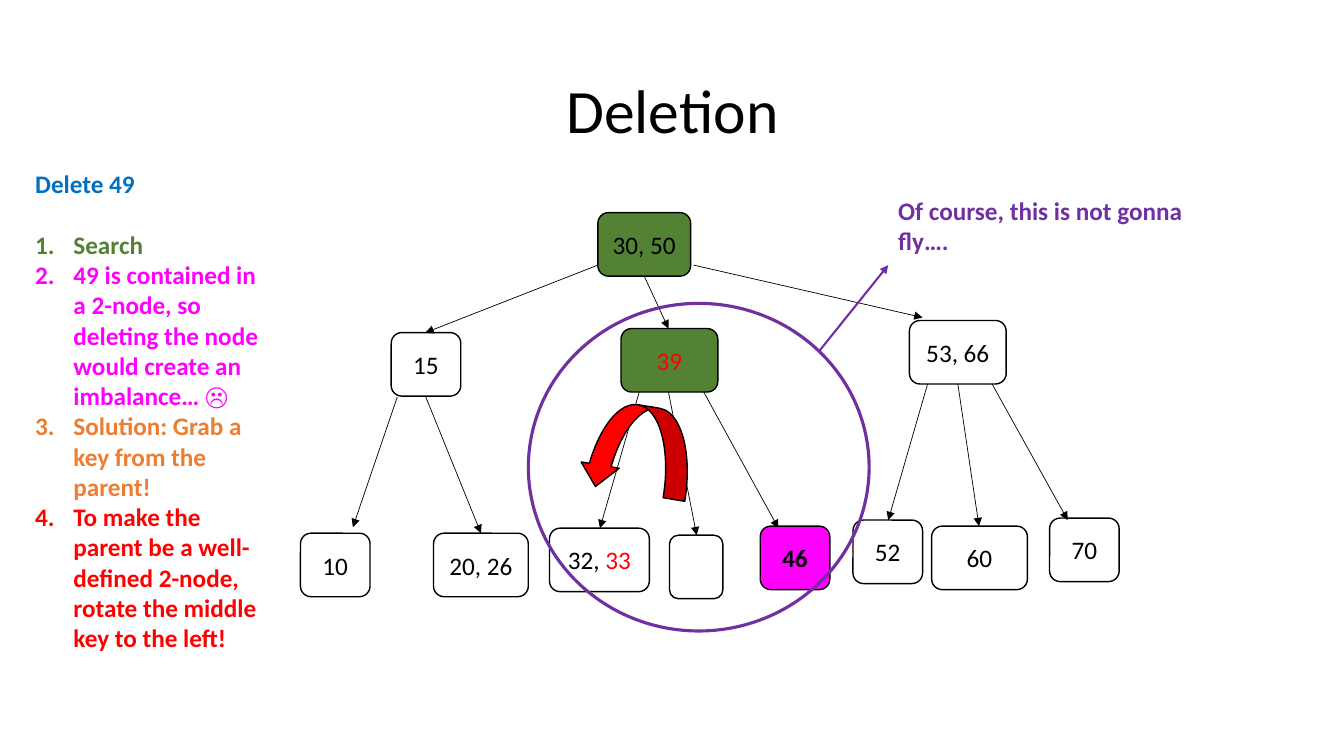
from lxml import etree
from pptx import Presentation
from pptx.dml.color import RGBColor
from pptx.enum.shapes import MSO_CONNECTOR, MSO_SHAPE
from pptx.enum.text import MSO_ANCHOR, PP_ALIGN
from pptx.oxml.ns import qn
from pptx.util import Inches, Pt

LINE = MSO_CONNECTOR.STRAIGHT
ROUND = MSO_SHAPE.ROUNDED_RECTANGLE
OVAL = MSO_SHAPE.OVAL
CURVE = MSO_SHAPE.CURVED_LEFT_ARROW
CENTER, LEFT = PP_ALIGN.CENTER, PP_ALIGN.LEFT
MIDDLE, TOP = MSO_ANCHOR.MIDDLE, MSO_ANCHOR.TOP

BLACK, BLUE, GREEN, PINK = "000000", "0070C0", "548235", "FF00FF"
ORANGE, RED, PURPLE = "ED7D31", "FF0000", "7030A0"
NODE_H = 0.63

# left, top, width, fill, bold, runs
NODES = [
    (5.93, 2.11, 0.92, GREEN, False, [("30, 50 ", BLACK)]),
    (3.88, 3.30, 0.69, None, False, [("15", BLACK)]),
    (6.16, 3.26, 0.96, GREEN, False, [("39", RED)]),
    (9.02, 3.18, 0.96, None, False, [("53, 66", BLACK)]),
    (2.98, 5.29, 0.69, None, False, [("10", BLACK)]),
    (4.30, 5.29, 0.94, None, False, [("20, 26", BLACK)]),
    (5.45, 5.24, 0.99, None, False, [("32, ", BLACK), ("33", RED)]),
    (6.64, 5.31, 0.53, None, False, []),
    (7.54, 5.22, 0.69, PINK, True, [("46", BLACK)]),
    (8.46, 5.16, 0.69, None, False, [("52", BLACK)]),
    (9.24, 5.22, 0.95, None, False, [("60", BLACK)]),
    (10.41, 5.14, 0.69, None, False, [("70", BLACK)]),
]

# start x, start y, end x, end y
EDGES = [
    (5.93, 2.63, 4.22, 3.30), (6.39, 2.74, 6.63, 3.26),
    (6.88, 2.63, 9.15, 3.15),
    (3.94, 3.94, 3.50, 5.23), (4.22, 3.93, 4.77, 5.29),
    (6.34, 3.89, 5.95, 5.24), (6.63, 3.89, 6.91, 5.31),
    (6.98, 3.89, 7.72, 5.24),
    (9.20, 3.81, 8.81, 5.16), (9.50, 3.81, 9.71, 5.22),
    (9.84, 3.81, 10.59, 5.16),
]

STEPS = [
    ("Search", GREEN),
    ("49 is contained in a 2-node, so deleting the node would create "
     "an imbalance… ☹", PINK),
    ("Solution: Grab a key from the parent!", ORANGE),
    ("To make the parent be a well-defined 2-node, rotate the middle "
     "key to the left!", RED),
]


def color(code):
    return RGBColor.from_string(code)


class Board:
    """The current slide and the style of what is put on it."""
    font = "Calibri"
    size = 18

    def __init__(self, slide):
        self.shapes = slide.shapes

    def add_runs(self, par, runs, bold=False, size=None):
        for text, code in runs:
            run = par.add_run()
            run.text = text
            run.font.name = self.font
            run.font.size = Pt(size or self.size)
            run.font.bold = bold
            run.font.color.rgb = color(code)

    def text(self, box, runs, bold=True, size=None, align=LEFT, anchor=TOP):
        frame = self.shapes.add_textbox(*map(Inches, box)).text_frame
        frame.word_wrap = True
        frame.vertical_anchor = anchor
        par = frame.paragraphs[0]
        par.alignment = align
        self.add_runs(par, runs, bold, size)
        return frame

    def steps(self, frame, items):
        """Append a numbered list, set off from the heading above it."""
        for i, item in enumerate(items):
            par = frame.add_paragraph()
            props = par._p.get_or_add_pPr()
            props.set("marL", str(Inches(0.38)))
            props.set("indent", str(-Inches(0.38)))
            num = etree.SubElement(props, qn("a:buAutoNum"))
            num.set("type", "arabicPeriod")
            if i == 0:
                par.space_before = Pt(22)
            self.add_runs(par, [item], bold=True)

    def shape(self, kind, box, fill=None, line=BLACK, width=1):
        item = self.shapes.add_shape(kind, *map(Inches, box))
        item.shadow.inherit = False
        if fill:
            item.fill.solid()
            item.fill.fore_color.rgb = color(fill)
        else:
            item.fill.background()
        item.line.color.rgb = color(line)
        item.line.width = Pt(width)
        return item

    def node(self, left, top, width, fill, bold, runs):
        frame = self.shape(ROUND, (left, top, width, NODE_H), fill).text_frame
        frame.word_wrap = True
        frame.vertical_anchor = MIDDLE
        par = frame.paragraphs[0]
        par.alignment = CENTER
        self.add_runs(par, runs, bold)

    def arrow(self, ends, line=BLACK, width=0.5):
        item = self.shapes.add_connector(LINE, *map(Inches, ends))
        item.line.color.rgb = color(line)
        item.line.width = Pt(width)
        tail = etree.SubElement(item.line._get_or_add_ln(), qn("a:tailEnd"))
        tail.set("type", "triangle")
        etree.SubElement(item._element.spPr, qn("a:effectLst"))

    def curve(self, box, turn, adjust, fill):
        """Draw a mirrored curved arrow turned by some degrees."""
        item = self.shape(CURVE, box, fill)
        item.rotation = turn
        item._element.spPr.get_or_add_xfrm().set("flipH", "1")
        for i, value in enumerate(adjust):
            item.adjustments[i] = value


def main():
    deck = Presentation()
    deck.slide_width, deck.slide_height = Inches(13.33), Inches(7.5)
    board = Board(deck.slides.add_slide(deck.slide_layouts[6]))

    title = board.text((0.92, 0.4, 11.5, 1.45), [("Deletion", BLACK)],
                       False, 44, CENTER, MIDDLE)
    title.paragraphs[0].line_spacing = 0.9
    for edge in EDGES:
        board.arrow(edge)
    for node in NODES:
        board.node(*node)

    notes = board.text((0.25, 1.62, 2.51, 5.25), [("Delete 49", BLUE)])
    board.steps(notes, STEPS)

    board.shape(OVAL, (5.24, 3.01, 3.38, 3.25), line=PURPLE, width=2.25)
    board.arrow((8.12, 3.49, 8.81, 2.63), PURPLE, 1.5)
    board.text((8.81, 1.89, 3.23, 0.71),
               [("Of course, this is not gonna fly….", PURPLE)])
    board.curve((5.89, 3.91, 0.87, 1.09), 99.4, (0.25, 0.44, 0.25), RED)
    deck.save("out.pptx")


if __name__ == "__main__":
    main()
